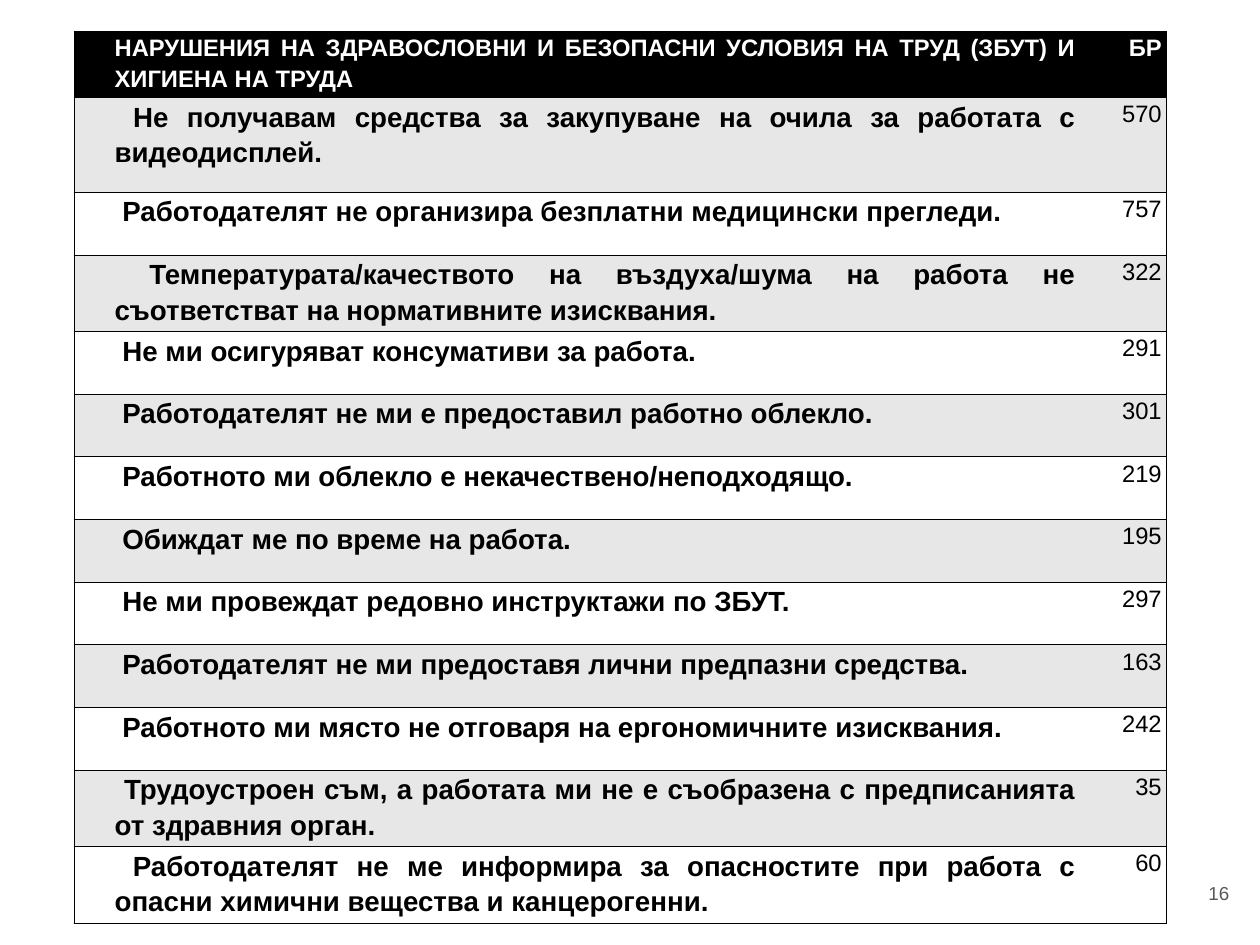
from lxml.etree import SubElement
from pptx import Presentation
from pptx.dml.color import RGBColor
from pptx.enum.text import MSO_ANCHOR, PP_ALIGN
from pptx.oxml.ns import qn
from pptx.util import Inches, Pt

COLORS = {"ink": "000000", "paper": "FFFFFF", "band": "E7E7E7", "page": "595959"}

ROWS = [
    ("НАРУШЕНИЯ НА ЗДРАВОСЛОВНИ И БЕЗОПАСНИ УСЛОВИЯ НА ТРУД (ЗБУТ) И ХИГИЕНА НА ТРУДА", "БР", 0.93),
    (" Не получавам средства за закупуване на очила за работата с видеодисплей.", "570", 1.33),
    (" Работодателят не организира безплатни медицински прегледи.", "757", 0.88),
    (" Температурата/качеството на въздуха/шума на работа не съответстват на нормативните изисквания.", "322", 0.93),
    (" Не ми осигуряват консумативи за работа.", "291", 0.88),
    (" Работодателят не ми е предоставил работно облекло.", "301", 0.88),
    (" Работното ми облекло е некачествено/неподходящо.", "219", 0.88),
    (" Обиждат ме по време на работа.", "195", 0.88),
    (" Не ми провеждат редовно инструктажи по ЗБУТ.", "297", 0.88),
    (" Работодателят не ми предоставя лични предпазни средства.", "163", 0.88),
    (" Работното ми място не отговаря на ергономичните изисквания.", "242", 0.88),
    (" Трудоустроен съм, а работата ми не е съобразена с предписанията от здравния орган.", "35", 0.88),
    (" Работодателят не ме информира за опасностите при работа с опасни химични вещества и канцерогенни.", "60", 0.93),
]


def style(para, size, color, bold, align):
    para.alignment = align
    for run in para.runs:
        run.font.name = "Arial"
        run.font.size = Pt(size)
        run.font.bold = bold
        run.font.color.rgb = RGBColor.from_string(COLORS[color])


def border(cell, inner):
    props = cell._tc.get_or_add_tcPr()
    for spot, side in enumerate(("lnL", "lnR", "lnT", "lnB")):
        line = SubElement(props, qn(f"a:{side}"), w=str(Pt(1)))
        if side == inner:
            SubElement(line, qn("a:noFill"))
        else:
            fill = SubElement(line, qn("a:solidFill"))
            SubElement(fill, qn("a:srgbClr"), val=COLORS["ink"])
        props.insert(spot, line)


deck = Presentation()
deck.slide_width = Inches(17.69)
deck.slide_height = Inches(13.27)
slide = deck.slides.add_slide(deck.slide_layouts[6])

box = slide.shapes.add_textbox(Inches(16.39), Inches(12.03), Inches(1.06), Inches(1.02))
frame = box.text_frame
frame.word_wrap = True
frame.vertical_anchor = MSO_ANCHOR.MIDDLE
frame.margin_left = frame.margin_right = Inches(0.19)
frame.margin_top = frame.margin_bottom = Inches(0.19)
frame.text = "16"
style(frame.paragraphs[0], 19, "page", False, PP_ALIGN.RIGHT)

table = slide.shapes.add_table(
    len(ROWS), 2, Inches(1.04), Inches(0.44), Inches(15.34), Inches(12.39)
).table
table.first_row = False
table.horz_banding = False
table.columns[0].width = Inches(14.12)
table.columns[1].width = Inches(1.22)

for row, (issue, count, height) in enumerate(ROWS):
    table.rows[row].height = Inches(height)
    head = row == 0
    shade = "ink" if head else "band" if row % 2 else "paper"
    color = "paper" if head else "ink"
    for col, text in enumerate((issue, count)):
        cell = table.cell(row, col)
        cell.margin_left = cell.margin_right = Inches(0.07)
        cell.margin_top = cell.margin_bottom = 0
        cell.fill.solid()
        cell.fill.fore_color.rgb = RGBColor.from_string(COLORS[shade])
        border(cell, "lnL" if col else "lnR")
        cell.text_frame.text = text
        para = cell.text_frame.paragraphs[0]
        para.line_spacing = 1.15
        if col:
            style(para, 24, color, head, PP_ALIGN.RIGHT)
        else:
            style(para, 24 if head else 28, color, True, PP_ALIGN.JUSTIFY)
            indent = para._p.get_or_add_pPr()
            indent.set("marL", str(Inches(0.5)))
            indent.set("indent", "0")

deck.save("out.pptx")
